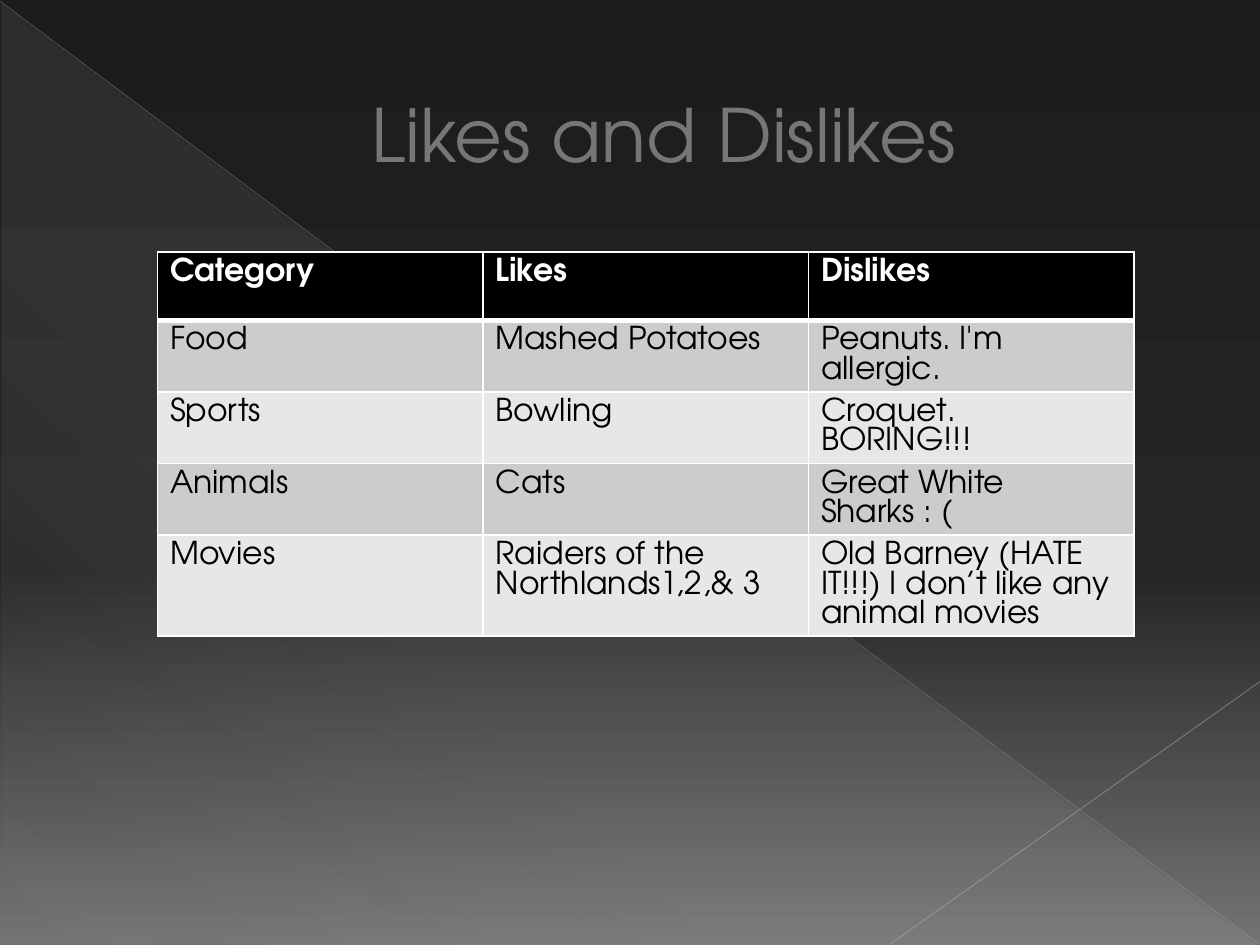
from lxml.etree import SubElement
from pptx import Presentation
from pptx.dml.color import RGBColor
from pptx.enum.shapes import MSO_CONNECTOR, MSO_SHAPE
from pptx.enum.text import MSO_ANCHOR, PP_ALIGN
from pptx.oxml.ns import qn
from pptx.util import Pt

FONT = "TeX Gyre Adventor"
COLORS = {
    "night": "1C1C1C", "coal": "252525", "ash": "737373", "sheen": "D2D2D2",
    "long_line": "B5B5B5", "short_line": "BEBEBE", "title": "767676",
    "black": "000000", "white": "FFFFFF", "dark_band": "CCCCCC", "light_band": "E7E7E7",
}
ROWS = [
    ["Category", "Likes", "Dislikes"],
    ["Food", "Mashed Potatoes", "Peanuts. I'm allergic."],
    ["Sports", "Bowling", "Croquet.\vBORING!!!"],
    ["Animals", "Cats", "Great White Sharks : ("],
    ["Movies", "Raiders of the Northlands1,2,& 3",
     "Old Barney (HATE IT!!!) I don’t like any animal movies"],
]


def rgb(name):
    return RGBColor.from_string(COLORS[name])


def write_text(frame, text, size=18, color="black", bold=False, align=None, spacing=None):
    para = frame.paragraphs[0]
    para.text = text
    para.alignment = align
    if spacing:
        para.line_spacing = Pt(spacing)
    for span in para.runs:
        span.font.name = FONT
        span.font.size = Pt(size)
        span.font.bold = bold
        span.font.color.rgb = rgb(color)
    return para


def add_color(parent, name, alpha=100):
    color = SubElement(parent, qn("a:srgbClr"), val=COLORS[name])
    if alpha < 100:
        SubElement(color, qn("a:alpha"), val=str(alpha * 1000))


def add_line_fill(line, name):
    add_color(SubElement(line, qn("a:solidFill")), name)


def set_gradient(fill, element, stops, angle):
    """Stops are (position, color, opacity); the angle runs clockwise."""
    fill.gradient()
    fill.gradient_angle = 360 - angle
    stop_list = next(element.iter(qn("a:gsLst")))
    for stop in list(stop_list):
        stop_list.remove(stop)
    for position, name, alpha in stops:
        add_color(SubElement(stop_list, qn("a:gs"), pos=str(position * 1000)), name, alpha)


class SlideBuilder:
    def __init__(self, deck):
        self.page = deck.slides.add_slide(deck.slide_layouts[5])
        self.shapes = self.page.shapes

    def background(self, stops, angle):
        set_gradient(self.page.background.fill, self.page._element, stops, angle)

    def triangle(self, left, top, width, height, stops, angle):
        shape = self.shapes.add_shape(
            MSO_SHAPE.RIGHT_TRIANGLE, Pt(left), Pt(top), Pt(width), Pt(height))
        shape.shadow.inherit = False
        shape.line.fill.background()
        set_gradient(shape.fill, shape._element, stops, angle)

    def line(self, start, end, color, width, alpha):
        line = self.shapes.add_connector(
            MSO_CONNECTOR.STRAIGHT, *(Pt(value) for value in start + end))
        line.line.width = Pt(width)
        line.line.color.rgb = rgb(color)
        color_node = next(line._element.spPr.iter(qn("a:srgbClr")))
        SubElement(color_node, qn("a:alpha"), val=str(alpha * 1000))
        SubElement(line._element.spPr, qn("a:effectLst"))

    def title(self, text, left, top, width, height, indent):
        box = self.shapes.title
        box.left, box.top, box.width, box.height = Pt(left), Pt(top), Pt(width), Pt(height)
        box.text_frame.vertical_anchor = MSO_ANCHOR.MIDDLE
        para = write_text(box.text_frame, text, size=42, color="title", align=PP_ALIGN.CENTER)
        para._p.get_or_add_pPr().set("marL", str(Pt(indent)))
        # Thin black outline on the letters
        run_format = para.runs[0]._r.get_or_add_rPr()
        outline = SubElement(run_format, qn("a:ln"), w=str(Pt(0.5)))
        add_line_fill(outline, "black")
        run_format.insert(0, outline)
        # Lift the title above the decoration
        self.shapes._spTree.append(box._element)

    def borders(self, cell, bottom):
        cell_format = cell._tc.get_or_add_tcPr()
        for index, (side, width) in enumerate(zip("LRTB", (1, 1, 1, bottom))):
            line = SubElement(cell_format, qn(f"a:ln{side}"), w=str(Pt(width)))
            add_line_fill(line, "white")
            cell_format.insert(index, line)

    def table(self, rows, left, top, column_width, row_height):
        frame = self.shapes.add_table(
            len(rows), len(rows[0]), Pt(left), Pt(top),
            Pt(column_width * len(rows[0])), Pt(row_height * len(rows)))
        table = frame.table
        for column in table.columns:
            column.width = Pt(column_width)
        for r, texts in enumerate(rows):
            header = r == 0
            band = "black" if header else "dark_band" if r % 2 else "light_band"
            for c, text in enumerate(texts):
                cell = table.cell(r, c)
                cell.fill.solid()
                cell.fill.fore_color.rgb = rgb(band)
                self.borders(cell, bottom=3 if header else 1)
                write_text(cell.text_frame, text, color="white" if header else "black",
                           bold=header, spacing=16.85)


def main():
    deck = Presentation()
    deck.slide_width, deck.slide_height = Pt(720), Pt(540)
    slide = SlideBuilder(deck)

    # Backdrop
    slide.background([(0, "night", 100), (60, "coal", 100), (100, "ash", 100)], angle=90)
    slide.triangle(0.7, 1.4, 718.6, 538.6,
                   [(0, "sheen", 10), (70, "sheen", 8), (100, "sheen", 1)], angle=133)
    slide.line((0, 0.7), (719.3, 539.3), "long_line", 0.39, alpha=35)
    slide.line((720, 389.5), (509, 539.3), "short_line", 0.47, alpha=45)

    # Content
    slide.title("Likes and Dislikes", 36, 21, 648, 110, indent=38.4)
    slide.table(ROWS, left=90, top=144, column_width=186, row_height=39)

    deck.save("out.pptx")


if __name__ == "__main__":
    main()
